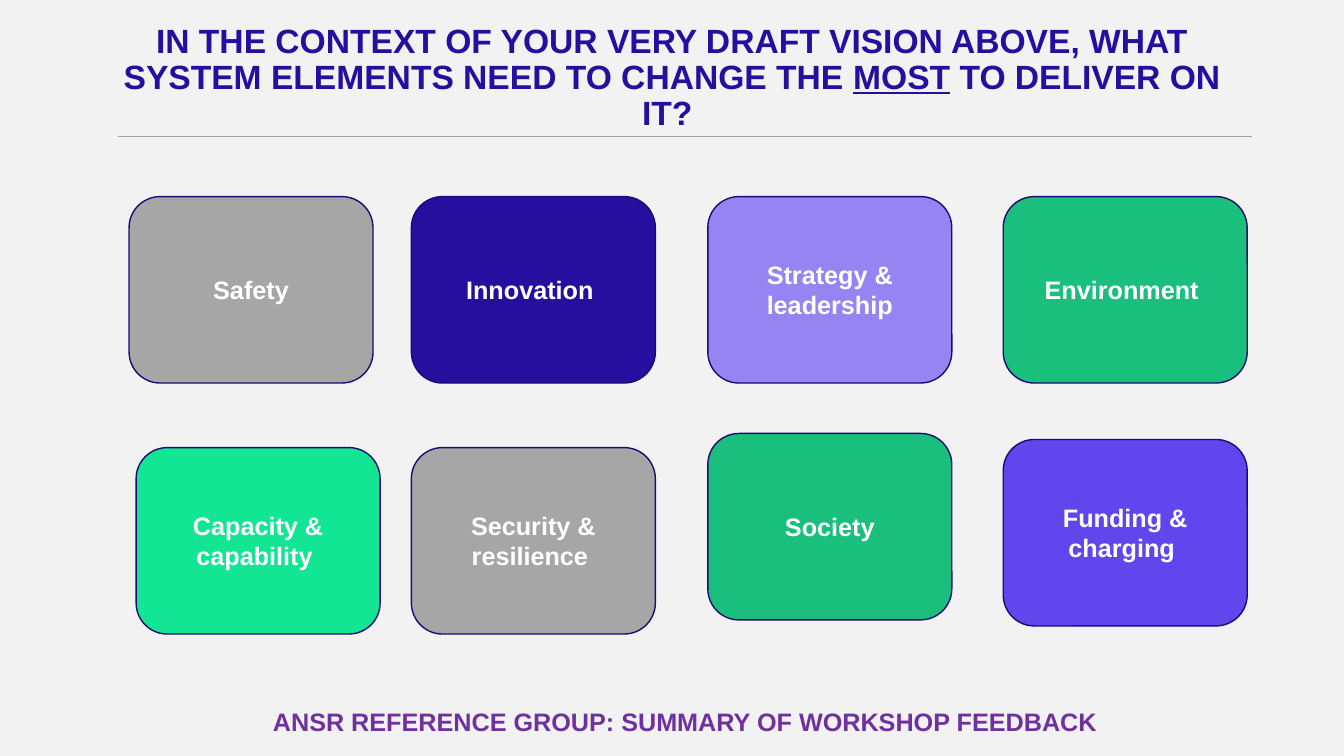
from lxml import etree
from pptx import Presentation
from pptx.dml.color import RGBColor
from pptx.enum.shapes import MSO_CONNECTOR, MSO_SHAPE
from pptx.enum.text import MSO_ANCHOR, MSO_AUTO_SIZE, PP_ALIGN
from pptx.oxml.ns import qn
from pptx.util import Inches, Pt

ROUNDED = MSO_SHAPE.ROUNDED_RECTANGLE
STRAIGHT = MSO_CONNECTOR.STRAIGHT
TOP, MIDDLE = MSO_ANCHOR.TOP, MSO_ANCHOR.MIDDLE
NO_FIT = MSO_AUTO_SIZE.NONE
CENTER = PP_ALIGN.CENTER

BACKGROUND = RGBColor(0xF2, 0xF2, 0xF2)
WHITE = RGBColor(0xFF, 0xFF, 0xFF)
GREY = RGBColor(0xA6, 0xA6, 0xA6)
NAVY = RGBColor(0x26, 0x0F, 0x9E)
OUTLINE = RGBColor(0x1C, 0x0B, 0x75)
LILAC = RGBColor(0x96, 0x84, 0xF3)
VIOLET = RGBColor(0x61, 0x46, 0xED)
GREEN = RGBColor(0x1A, 0xBE, 0x7D)
MINT = RGBColor(0x12, 0xE6, 0x94)
PURPLE = RGBColor(0x70, 0x30, 0xA0)

CARD_W, CARD_H = 2.42, 1.85

# Cards: left, top, fill, label
CARDS = [
    (1.28, 1.95, GREY, "Safety"),
    (4.08, 1.95, NAVY, "Innovation "),
    (7.02, 1.95, LILAC, "Strategy & leadership"),
    (9.95, 1.95, GREEN, "Environment "),
    (1.35, 4.44, MINT, "Capacity & capability "),
    (4.08, 4.44, GREY, "Security & resilience "),
    (7.02, 4.3, GREEN, "Society"),
    (9.95, 4.36, VIOLET, "Funding & charging "),
]


class SlideBuilder:
    font = "Arial"

    def __init__(self, slide):
        self.slide = slide
        fill = slide.background.fill
        fill.solid()
        fill.fore_color.rgb = BACKGROUND

    def style(self, p, size, color):
        p.alignment = CENTER
        p.font.name = self.font
        p.font.size = Pt(size)
        p.font.bold = True
        p.font.color.rgb = color

    def title(self, x, y, w, h, before, underlined, after):
        sp = self.slide.shapes.title
        sp.left, sp.top, sp.width, sp.height = map(Inches, (x, y, w, h))
        tf = sp.text_frame
        tf.margin_left = tf.margin_right = tf.margin_top = tf.margin_bottom = 0
        tf.vertical_anchor = TOP
        tf.auto_size = NO_FIT
        tf.word_wrap = True
        p = tf.paragraphs[0]
        for text in (before, underlined, after):
            r = p.add_run()
            r.text = text
            r.font.underline = text == underlined
        p.line_spacing = 0.9
        self.style(p, 24, NAVY)

    def rule(self, x1, x2, y):
        line = self.slide.shapes.add_connector(
            STRAIGHT, Inches(x1), Inches(y), Inches(x2), Inches(y))
        line.line.color.rgb = GREY
        line.line.width = Pt(0.75)
        etree.SubElement(line._element.spPr, qn("a:effectLst"))

    def card(self, x, y, fill, label):
        sp = self.slide.shapes.add_shape(
            ROUNDED, Inches(x), Inches(y), Inches(CARD_W), Inches(CARD_H))
        sp.shadow.inherit = False
        sp.fill.solid()
        sp.fill.fore_color.rgb = fill
        sp.line.color.rgb = OUTLINE
        sp.line.width = Pt(1)
        tf = sp.text_frame
        tf.word_wrap = True
        tf.vertical_anchor = MIDDLE
        tf.text = label
        self.style(tf.paragraphs[0], 18, WHITE)

    def caption(self, x, y, w, h, text):
        sp = self.slide.shapes.add_textbox(*map(Inches, (x, y, w, h)))
        tf = sp.text_frame
        tf.word_wrap = True
        tf.text = text
        self.style(tf.paragraphs[0], 18, PURPLE)


def main():
    prs = Presentation()
    prs.slide_width, prs.slide_height = Inches(13.33), Inches(7.5)
    s = SlideBuilder(prs.slides.add_slide(prs.slide_layouts[5]))

    # Heading and footer
    s.rule(1.17, 12.42, 1.35)
    s.caption(0.66, 6.96, 12.34, 0.4,
              "ANSR REFERENCE GROUP: SUMMARY OF WORKSHOP FEEDBACK ")
    s.title(1.04, 0.24, 11.25, 0.71,
            "IN THE CONTEXT OF YOUR VERY DRAFT VISION ABOVE, WHAT "
            "SYSTEM ELEMENTS NEED TO CHANGE THE ",
            "MOST", " TO DELIVER ON IT? ")

    # System elements
    for card in CARDS:
        s.card(*card)

    prs.save("out.pptx")


if __name__ == "__main__":
    main()
